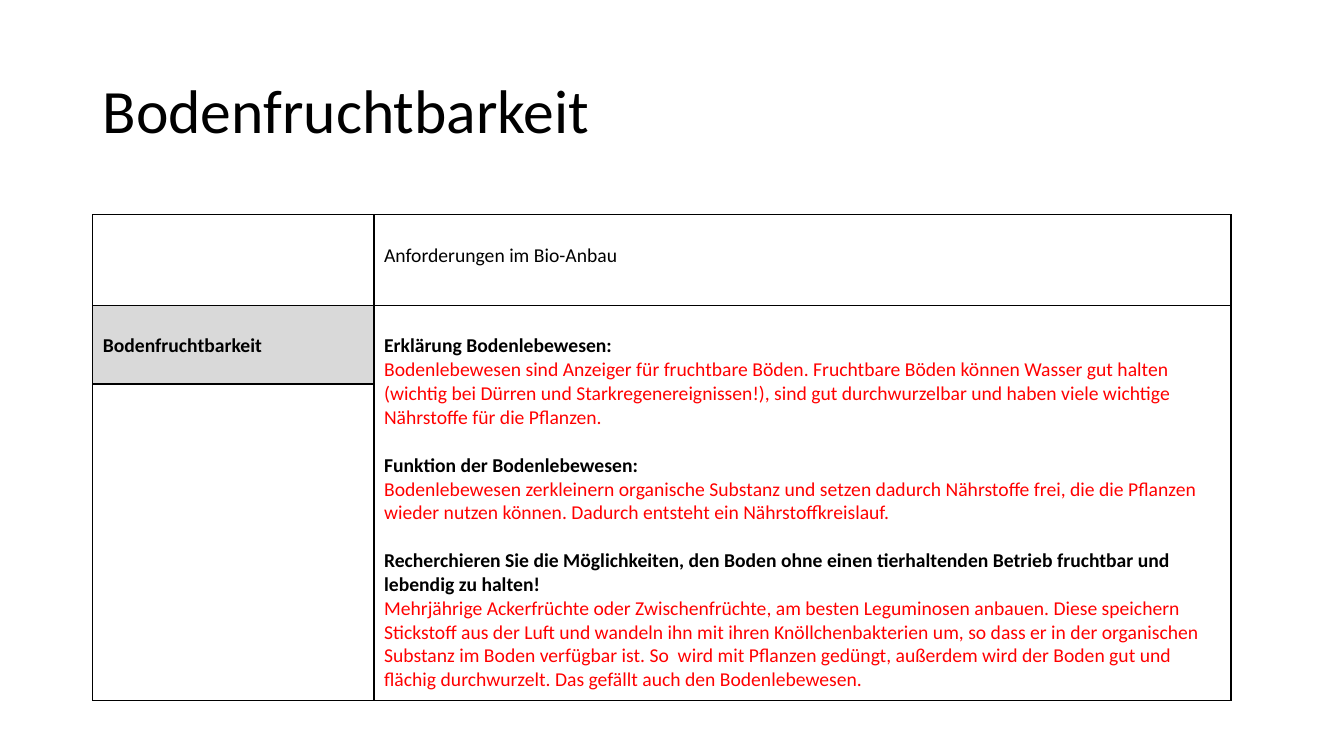
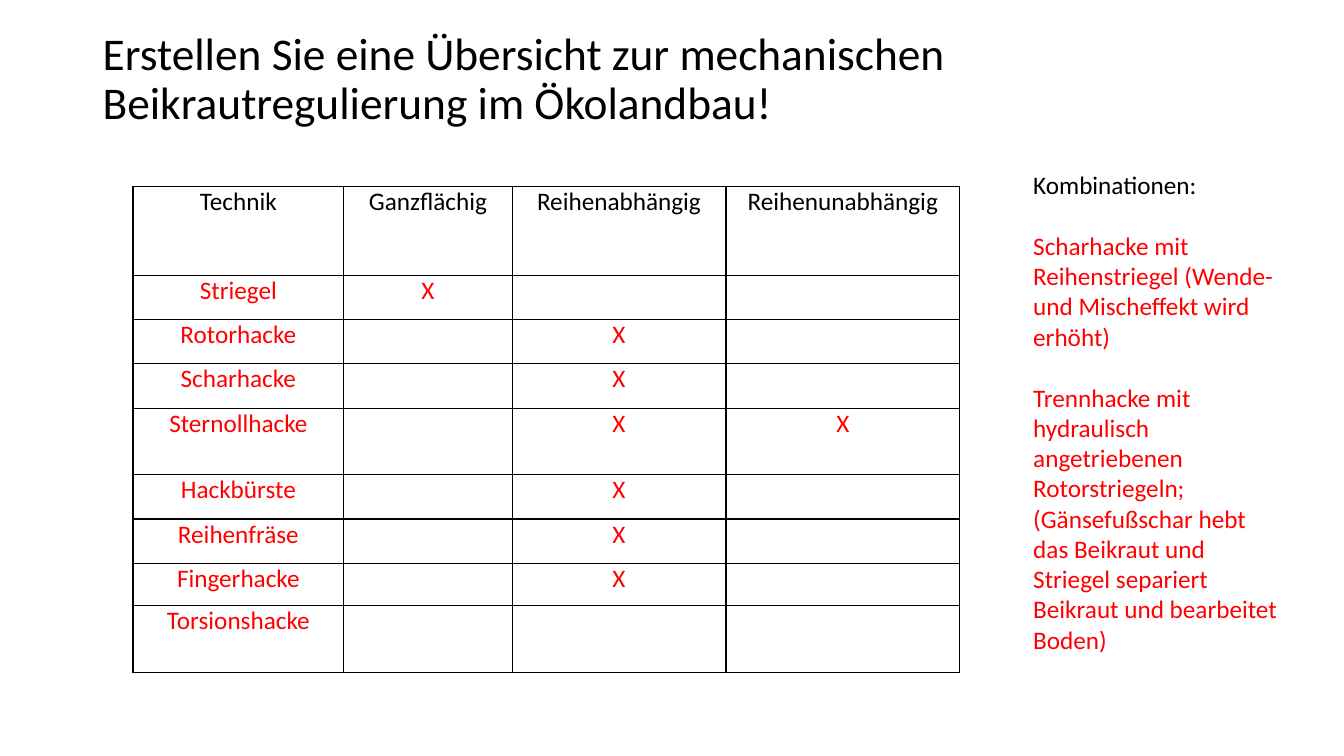
from lxml.etree import SubElement
from pptx import Presentation
from pptx.dml.color import RGBColor
from pptx.enum.text import MSO_ANCHOR as Anchor, PP_ALIGN as Align
from pptx.oxml import parse_xml
from pptx.oxml.ns import nsdecls, qn
from pptx.util import Inches, Pt

COLORS = {"text": "000000", "answer": "FF0000", "label": "D9D9D9", "border": "000000"}
FONT = "Calibri"
WIDTH, HEIGHT = Inches(13.33), Inches(7.5)

REQUIREMENTS = [
    ("Erklärung Bodenlebewesen:",
     "Bodenlebewesen sind Anzeiger für fruchtbare Böden. Fruchtbare Böden können Wasser gut halten "
     "(wichtig bei Dürren und Starkregenereignissen!), sind gut durchwurzelbar und haben viele wichtige "
     "Nährstoffe für die Pflanzen."),
    ("Funktion der Bodenlebewesen:",
     "Bodenlebewesen zerkleinern organische Substanz und setzen dadurch Nährstoffe frei, die die Pflanzen "
     "wieder nutzen können. Dadurch entsteht ein Nährstoffkreislauf."),
    ("Recherchieren Sie die Möglichkeiten, den Boden ohne einen tierhaltenden Betrieb fruchtbar und "
     "lebendig zu halten!",
     "Mehrjährige Ackerfrüchte oder Zwischenfrüchte, am besten Leguminosen anbauen. Diese speichern "
     "Stickstoff aus der Luft und wandeln ihn mit ihren Knöllchenbakterien um, so dass er in der organischen "
     "Substanz im Boden verfügbar ist. So  wird mit Pflanzen gedüngt, außerdem wird der Boden gut und "
     "flächig durchwurzelt. Das gefällt auch den Bodenlebewesen."),
]
HEADINGS = ["Technik", "Ganzflächig", "Reihenabhängig", "Reihenunabhängig"]
TECHNIQUES = [  # name and the columns that are marked
    ("Striegel", [1]), ("Rotorhacke", [2]), ("Scharhacke", [2]), ("Sternollhacke", [2, 3]),
    ("Hackbürste", [2]), ("Reihenfräse", [2]), ("Fingerhacke", [2]), ("Torsionshacke", []),
]
COMBINATIONS = [
    "Scharhacke mit Reihenstriegel (Wende- und Mischeffekt wird erhöht)",
    "Trennhacke mit hydraulisch angetriebenen Rotorstriegeln; (Gänsefußschar hebt das Beikraut und "
    "Striegel separiert Beikraut und bearbeitet Boden)",
]


def box(left, top, width, height):
    """Turn percentages of the slide's size into lengths."""
    return tuple(int(size * share / 100) for size, share in
                 zip((WIDTH, HEIGHT, WIDTH, HEIGHT), (left, top, width, height)))


def write(frame, text, size, color="text", bold=False, align=Align.LEFT, spacing=1.0, before=0):
    """Add a paragraph, using the frame's first one while it is empty."""
    paragraph = frame.paragraphs[0]
    if paragraph.text:
        paragraph = frame.add_paragraph()
    paragraph.text = text
    paragraph.alignment = align
    paragraph.line_spacing = spacing
    paragraph.space_before = Pt(before)
    font = paragraph.font
    font.name, font.size, font.bold = FONT, Pt(size), bold
    font.color.rgb = RGBColor.from_string(COLORS[color])


def add_text_frame(slide, area, anchor=Anchor.TOP):
    frame = slide.shapes.add_textbox(*area).text_frame
    frame.word_wrap = True
    frame.vertical_anchor = anchor
    return frame


def add_title(slide, text, size, top):
    frame = add_text_frame(slide, box(6.9, top, 86.27, 19.33), Anchor.MIDDLE)
    write(frame, text, size, spacing=0.9)


def add_borders(cell):
    properties = cell._tc.get_or_add_tcPr()
    for index, side in enumerate(("lnL", "lnR", "lnT", "lnB")):
        line = parse_xml(f'<a:{side} {nsdecls("a")} w="{Pt(1)}"/>')
        fill = SubElement(line, qn("a:solidFill"))
        SubElement(fill, qn("a:srgbClr"), val=COLORS["border"])
        properties.insert(index, line)


def add_grid(slide, area, columns, rows):
    """Add a plain ruled table; columns and rows are relative sizes."""
    table = slide.shapes.add_table(len(rows), len(columns), *area).table
    table.first_row = table.horz_banding = False
    for lines, sizes, name, total in ((table.columns, columns, "width", area[2]),
                                      (table.rows, rows, "height", area[3])):
        for line, size in zip(lines, sizes):
            setattr(line, name, int(total * size / sum(sizes)))
    for cell in table.iter_cells():
        cell.fill.background()
        add_borders(cell)
    return table


def add_requirements(slide, area):
    size = 14
    table = add_grid(slide, area, [2.79, 8.5], [0.9, 0.78, 3.14])
    write(table.cell(0, 1).text_frame, "Anforderungen im Bio-Anbau", size, spacing=2)
    label = table.cell(1, 0)
    label.fill.solid()
    label.fill.fore_color.rgb = RGBColor.from_string(COLORS["label"])
    write(label.text_frame, "Bodenfruchtbarkeit", size, bold=True, spacing=2)
    table.cell(1, 1).merge(table.cell(2, 1))
    frame = table.cell(1, 1).text_frame
    for task, answer in REQUIREMENTS:
        wraps = len(task) > 90
        write(frame, task, size, bold=True, spacing=1 if wraps else 2, before=17 if wraps else 0)
        write(frame, answer, size, "answer")


def add_techniques(slide, area):
    table = add_grid(slide, area, [2.09, 1.67, 2.12, 2.32],
                     [0.88, 0.44, 0.44, 0.44, 0.66, 0.44, 0.44, 0.42, 0.66])
    marked = [[name] + ["X" if column in marks else "" for column in (1, 2, 3)]
              for name, marks in TECHNIQUES]
    for row, texts in enumerate([HEADINGS] + marked):
        for column, text in enumerate(texts):
            cell = table.cell(row, column)
            cell.margin_left = cell.margin_right = Inches(0.07)
            cell.margin_top = cell.margin_bottom = 0
            write(cell.text_frame, text, 18, "answer" if row else "text", align=Align.CENTER)


def add_combinations(slide, area):
    frame = add_text_frame(slide, area)
    write(frame, "Kombinationen:", 18)
    for combination in COMBINATIONS:
        write(frame, combination, 18, "answer", before=22)


def main():
    presentation = Presentation()
    presentation.slide_width, presentation.slide_height = WIDTH, HEIGHT
    blank = presentation.slide_layouts[6]

    fertility = presentation.slides.add_slide(blank)
    add_title(fertility, "Bodenfruchtbarkeit", 44, top=5.33)
    add_requirements(fertility, box(6.9, 28.4, 84.7, 64.27))

    weeding = presentation.slides.add_slide(blank)
    add_title(weeding, "Erstellen Sie eine Übersicht zur mechanischen Beikrautregulierung im Ökolandbau!",
              32.4, top=0.93)
    add_techniques(weeding, box(9.9, 24.67, 61.52, 64.27))
    add_combinations(weeding, box(76.14, 21.73, 20.03, 70))

    presentation.save("out.pptx")


if __name__ == "__main__":
    main()
